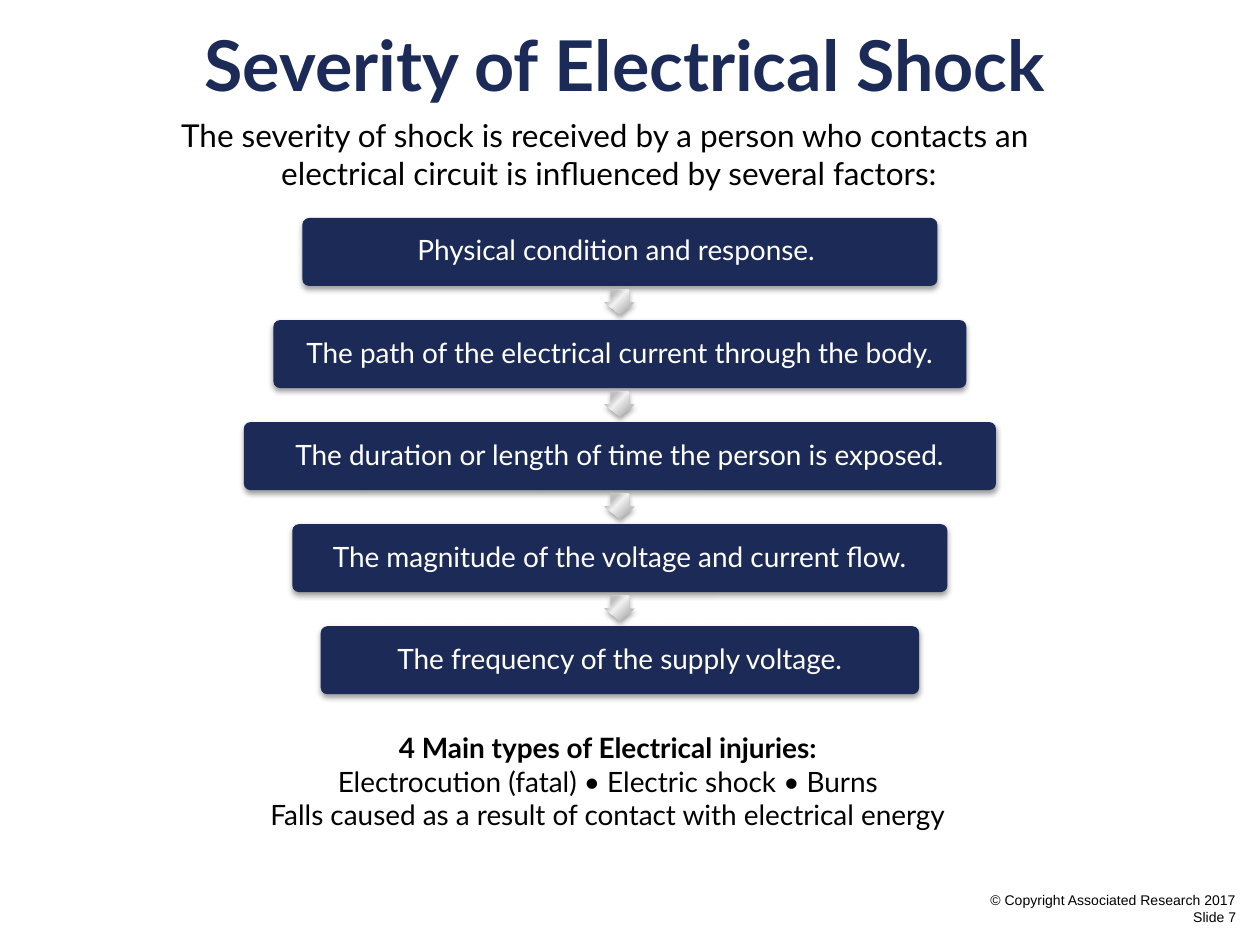
from dataclasses import dataclass
from lxml.etree import SubElement
from pptx import Presentation
from pptx.dml.color import RGBColor
from pptx.enum.shapes import MSO_SHAPE
from pptx.enum.text import MSO_ANCHOR, MSO_AUTO_SIZE, PP_ALIGN
from pptx.oxml import parse_xml
from pptx.oxml.ns import nsdecls, qn
from pptx.util import Inches, Pt


@dataclass(frozen=True)
class Theme:
    navy: str = "1C2A58"
    white: str = "FFFFFF"
    black: str = "000000"
    grey: str = "BFBFBF"
    pale: str = "F2F2F2"
    font: str = "Lato"
    small: str = "Arial"
    head: int = 40
    lead: int = 18
    body: int = 16
    foot: int = 8


class Deck:
    def __init__(self, theme):
        self.theme = theme
        self.show = Presentation()
        self.show.slide_width = Inches(10)
        self.show.slide_height = Inches(7.5)
        self.slide = self.show.slides.add_slide(self.show.slide_layouts[5])

    def label(self, shape, lines, size, color, font=None, align=PP_ALIGN.CENTER,
              anchor=MSO_ANCHOR.TOP, space=None, bold=0):
        frame = shape.text_frame
        frame.text = "\n".join(lines)
        frame.word_wrap = True
        frame.auto_size = MSO_AUTO_SIZE.NONE
        frame.vertical_anchor = anchor
        for row, para in enumerate(frame.paragraphs):
            para.alignment = align
            para.line_spacing = space
            for run in para.runs:
                run.font.name = font or self.theme.font
                run.font.size = Pt(size)
                run.font.bold = row < bold
                run.font.color.rgb = RGBColor.from_string(color)

    def title(self, area, text):
        shape = self.slide.shapes.title
        shape.left, shape.top, shape.width, shape.height = map(Inches, area)
        self.label(shape, [text], self.theme.head, self.theme.navy,
                   anchor=MSO_ANCHOR.MIDDLE, space=0.9, bold=1)

    def text(self, area, lines, size, **style):
        shape = self.slide.shapes.add_textbox(*map(Inches, area))
        self.label(shape, lines, size, self.theme.black, **style)

    def shape(self, kind, mid, top, width, height):
        shape = self.slide.shapes.add_shape(
            kind, Inches(mid - width / 2), Inches(top), Inches(width), Inches(height))
        shape.line.fill.background()
        return shape

    def shade(self, shape):
        shape.shadow.inherit = False
        glow = shape._element.spPr.find(qn("a:effectLst"))
        drop = SubElement(glow, qn("a:outerShdw"), blurRad="40000", dist="20000",
                          dir="5400000", rotWithShape="0")
        tint = SubElement(drop, qn("a:srgbClr"), val=self.theme.black)
        SubElement(tint, qn("a:alpha"), val="38000")

    def box(self, mid, top, width, height, text):
        shape = self.shape(MSO_SHAPE.ROUNDED_RECTANGLE, mid, top, width, height)
        shape.adjustments[0] = 0.1
        shape.fill.solid()
        shape.fill.fore_color.rgb = RGBColor.from_string(self.theme.navy)
        self.shade(shape)
        self.label(shape, [text], self.theme.body, self.theme.white,
                   anchor=MSO_ANCHOR.MIDDLE, space=0.9)

    def arrow(self, mid, top):
        shape = self.shape(MSO_SHAPE.RIGHT_ARROW, mid, top, 0.2, 0.24)
        shape.rotation = 90
        shape.adjustments[0] = 0.6
        shape.adjustments[1] = 0.5
        stops = ((27, self.theme.grey), (59, self.theme.pale), (77, self.theme.grey))
        marks = "".join(f'<a:gs pos="{pos}000"><a:srgbClr val="{color}"/></a:gs>'
                        for pos, color in stops)
        shape._element.spPr.find(qn("a:prstGeom")).addnext(parse_xml(
            f'<a:gradFill {nsdecls("a")} rotWithShape="1"><a:gsLst>{marks}</a:gsLst>'
            '<a:lin ang="8100000" scaled="0"/></a:gradFill>'))
        self.shade(shape)


def main():
    theme = Theme()
    deck = Deck(theme)
    deck.title((0.17, 0.17, 9.58, 0.75), "Severity of Electrical Shock")
    deck.text((0.25, 0.87, 9.17, 0.71),
              ["The severity of shock is received by a person who contacts an \v"
               "electrical circuit is influenced by several factors:"], theme.lead)

    mid, start, tall = 4.92, 1.73, 0.54
    step = tall * 1.5
    factors = (
        (5.04, "Physical condition and response. "),
        (5.5, "The path of the electrical current through the body."),
        (5.97, "The duration or length of time the person is exposed."),
        (5.2, "The magnitude of the voltage and current flow."),
        (4.75, "The frequency of the supply voltage."),
    )
    for row, (width, text) in enumerate(factors):
        top = start + row * step
        if row:
            deck.arrow(mid, top - 0.26)
        deck.box(mid, top, width, tall, text)

    deck.text((0.95, 5.75, 7.75, 0.94),
              ["4 Main types of Electrical injuries:",
               "Electrocution (fatal) • Electric shock • Burns",
               "Falls caused as a result of contact with electrical energy"],
              theme.body, bold=1)
    deck.text((7.58, 7.08, 2.33, 0.26),
              ["© Copyright Associated Research 2017", "Slide 7"], theme.foot,
              font=theme.small, align=PP_ALIGN.RIGHT, anchor=MSO_ANCHOR.MIDDLE)
    deck.show.save("out.pptx")


if __name__ == "__main__":
    main()
